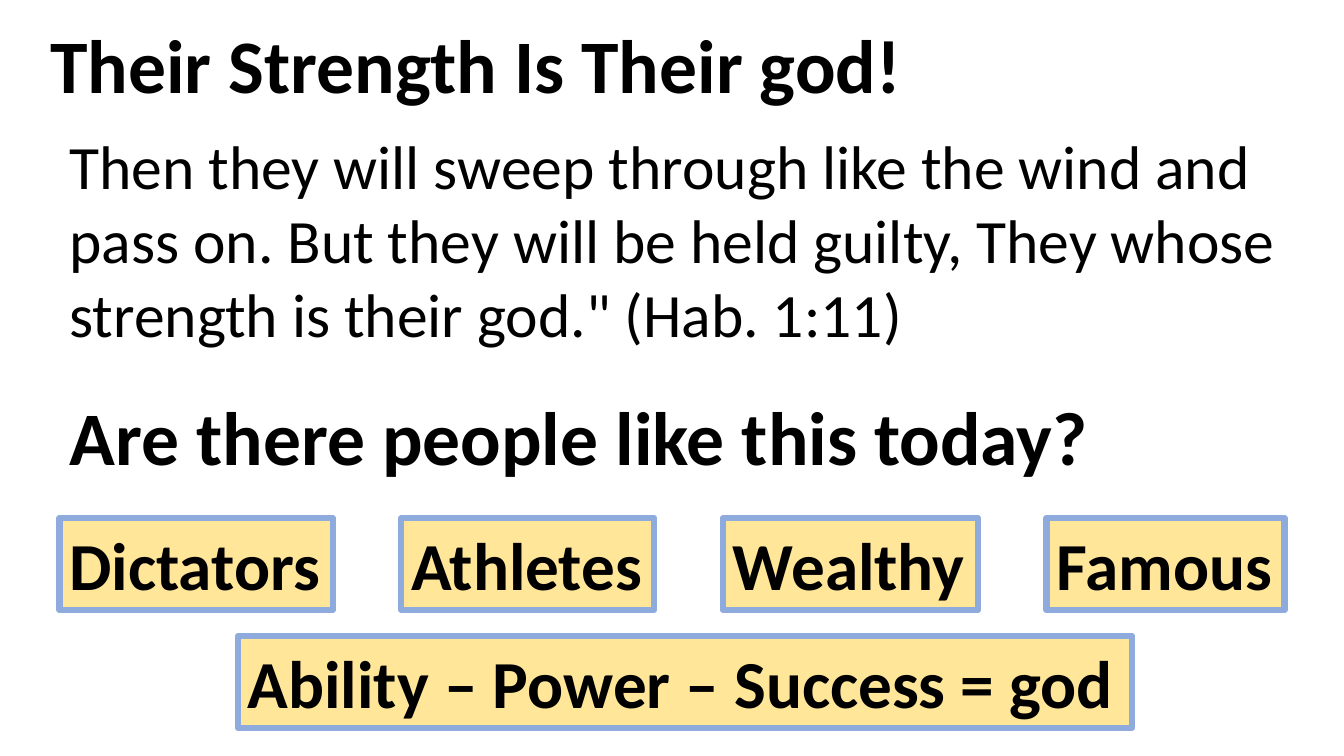
from dataclasses import dataclass
from pptx import Presentation
from pptx.dml.color import RGBColor
from pptx.enum.shapes import MSO_SHAPE
from pptx.enum.text import MSO_ANCHOR, MSO_AUTO_SIZE, PP_ALIGN
from pptx.util import Inches, Pt

# Content
TITLE = "Their Strength Is Their god!"
VERSE = ("Then they will sweep through like the wind and pass on. "
         "But they will be held guilty, They whose strength is their god.\" (Hab. 1:11)")
QUESTION = "Are there people like this today?"
GROUPS = [("Dictators", 2.71), ("Athletes", 2.51), ("Wealthy", 2.53), ("Famous", 2.36)]
CONCLUSION = "Ability – Power – Success = god"


@dataclass(frozen=True)
class Theme:
    font: str = "Calibri"
    text: RGBColor = RGBColor(0, 0, 0)
    fill: RGBColor = RGBColor(0xFF, 0xE6, 0x99)
    border: RGBColor = RGBColor(0x8F, 0xAA, 0xDC)
    border_width: float = 4.5
    heading_size: int = 54
    verse_size: int = 44
    label_size: int = 48


THEME = Theme()

# Layout in inches
MARGIN = 0.59
HEADING_HEIGHT = 1.01
LABEL_HEIGHT = 0.91
LABEL_TOP = 5.14
LABEL_GAP = 0.68
ROW_STEP = 1.17


def write(shape, text, size, bold=True, wrap=False):
    frame = shape.text_frame
    frame.word_wrap = wrap
    frame.auto_size = MSO_AUTO_SIZE.SHAPE_TO_FIT_TEXT
    frame.vertical_anchor = MSO_ANCHOR.TOP
    paragraph = frame.paragraphs[0]
    paragraph.text = text
    paragraph.alignment = PP_ALIGN.LEFT
    font = paragraph.font
    font.name, font.size, font.bold = THEME.font, Pt(size), bold
    font.color.rgb = THEME.text


def add_text(slide, text, box, size, **style):
    write(slide.shapes.add_textbox(*map(Inches, box)), text, size, **style)


def add_label(slide, text, left, top, width):
    box = map(Inches, (left, top, width, LABEL_HEIGHT))
    label = slide.shapes.add_shape(MSO_SHAPE.RECTANGLE, *box)
    label.shadow.inherit = False
    label.fill.solid()
    label.fill.fore_color.rgb = THEME.fill
    label.line.color.rgb = THEME.border
    label.line.width = Pt(THEME.border_width)
    write(label, text, THEME.label_size)


def main():
    presentation = Presentation()
    presentation.slide_width, presentation.slide_height = Inches(13.33), Inches(7.5)
    slide = presentation.slides.add_slide(presentation.slide_layouts[6])

    # Title, verse and question
    add_text(slide, TITLE, (0.4, 0.13, 8.73, HEADING_HEIGHT), THEME.heading_size)
    add_text(slide, VERSE, (MARGIN, 1.22, 12.42, 2.32), THEME.verse_size,
             bold=False, wrap=True)
    add_text(slide, QUESTION, (MARGIN, 3.82, 10.41, HEADING_HEIGHT), THEME.heading_size)

    # Row of groups with equal gaps
    left = MARGIN
    for name, width in GROUPS:
        add_label(slide, name, left, LABEL_TOP, width)
        left += width + LABEL_GAP

    # Conclusion
    add_label(slide, CONCLUSION, 2.36, LABEL_TOP + ROW_STEP, 8.87)

    presentation.save("out.pptx")


if __name__ == "__main__":
    main()
